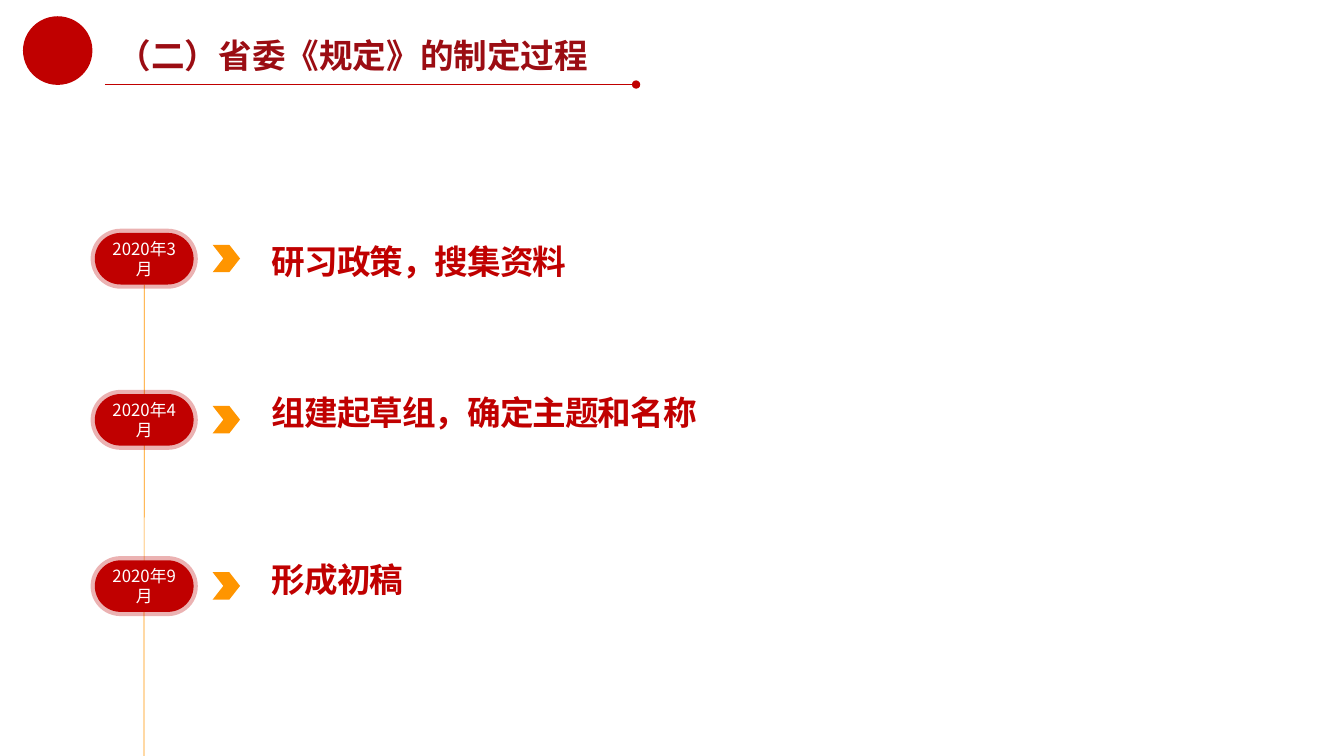
from lxml import etree
from pptx import Presentation
from pptx.dml.color import RGBColor
from pptx.enum.shapes import MSO_CONNECTOR, MSO_SHAPE as SHAPE
from pptx.enum.text import MSO_ANCHOR as ANCHOR, PP_ALIGN as ALIGN
from pptx.oxml.ns import qn
from pptx.util import Cm, Pt

FONT = "Noto Sans CJK SC"
COLORS = {"red": "C00000", "title": "9B0D13", "orange": "FF9500", "white": "FFFFFF"}
C = {name: RGBColor.from_string(value) for name, value in COLORS.items()}

prs = Presentation()
prs.slide_width, prs.slide_height = Cm(33.87), Cm(19.05)
s = prs.slides.add_slide(prs.slide_layouts[6])


def add_shape(kind, x, y, w, h, color):
    sp = s.shapes.add_shape(kind, Cm(x), Cm(y), Cm(w), Cm(h))
    sp.shadow.inherit = False
    sp.fill.solid()
    sp.fill.fore_color.rgb = C[color]
    sp.line.fill.background()
    return sp


def write(sp, text, size, color, align, bold=False, spacing=None, tracking=None):
    """Fill the shape's first paragraph with one run; tracking is in 1/100 pt."""
    tf = sp.text_frame
    tf.word_wrap = True
    p = tf.paragraphs[0]
    p.alignment = align
    p.line_spacing = spacing
    r = p.add_run()
    r.text = text
    r.font.size, r.font.bold, r.font.name = Pt(size), bold, FONT
    r.font.color.rgb = C[color]
    rPr = r._r.get_or_add_rPr()
    etree.SubElement(rPr, qn("a:ea"), typeface=FONT)
    if tracking is not None:
        rPr.set("spc", str(tracking))


# Header: plain disc for the emblem, rule and title
add_shape(SHAPE.OVAL, 0.58, 0.41, 1.75, 1.73, "red")

rule = s.shapes.add_connector(MSO_CONNECTOR.STRAIGHT, Cm(2.64), Cm(2.13), Cm(16.03), Cm(2.13))
timeline = s.shapes.add_connector(MSO_CONNECTOR.STRAIGHT, Cm(3.63), Cm(7.17), Cm(3.63), Cm(19.05))
for line, color, width in ((rule, "red", 0.75), (timeline, "orange", 0.5)):
    line.line.color.rgb = C[color]
    line.line.width = Pt(width)
    etree.SubElement(line._element.spPr, qn("a:effectLst"))
etree.SubElement(rule.line._get_or_add_ln(), qn("a:tailEnd"), type="oval")

title = s.shapes.add_textbox(Cm(2.72), Cm(0.86), Cm(13), Cm(1.52))
write(title, "（二）省委《规定》的制定过程", 24, "title", ALIGN.LEFT, bold=True, spacing=0.9)

# Timeline: date, pill top, step, then the step's top, width, height and line spacing
STEPS = [
    ("2020年3月", 5.87, "研习政策，搜集资料", 5.79, 12.17, 1.42, 33),
    ("2020年4月", 9.93, "组建起草组，确定主题和名称", 9.93, 23.88, 1.12, 24),
    ("2020年9月", 14.12, "形成初稿", 14.12, 21.34, 1.12, 24),
]
pills = []
for date, y, step, top, width, height, spacing in STEPS:
    box = s.shapes.add_textbox(Cm(6.6), Cm(top), Cm(width), Cm(height))
    write(box, step, 24, "red", ALIGN.JUSTIFY, bold=True, spacing=Pt(spacing), tracking=-70)

    pill = add_shape(SHAPE.ROUNDED_RECTANGLE, 2.39, y, 2.49, 1.3, "red")
    pill.adjustments[0] = 0.5
    pill.line.color.rgb = C["red"]
    pill.line.width = Pt(6)
    halo = pill.line._get_or_add_ln().find(".//" + qn("a:srgbClr"))
    etree.SubElement(halo, qn("a:alpha"), val="30000")
    pill.text_frame.vertical_anchor = ANCHOR.MIDDLE
    write(pill, date, 12, "white", ALIGN.CENTER)
    pills.append(pill)

    chevron = add_shape(SHAPE.CHEVRON, 5.36, y + 0.3, 0.69, 0.69, "orange")
    chevron.adjustments[0] = 0.39

timeline.begin_connect(pills[0], 2)

prs.save("out.pptx")
